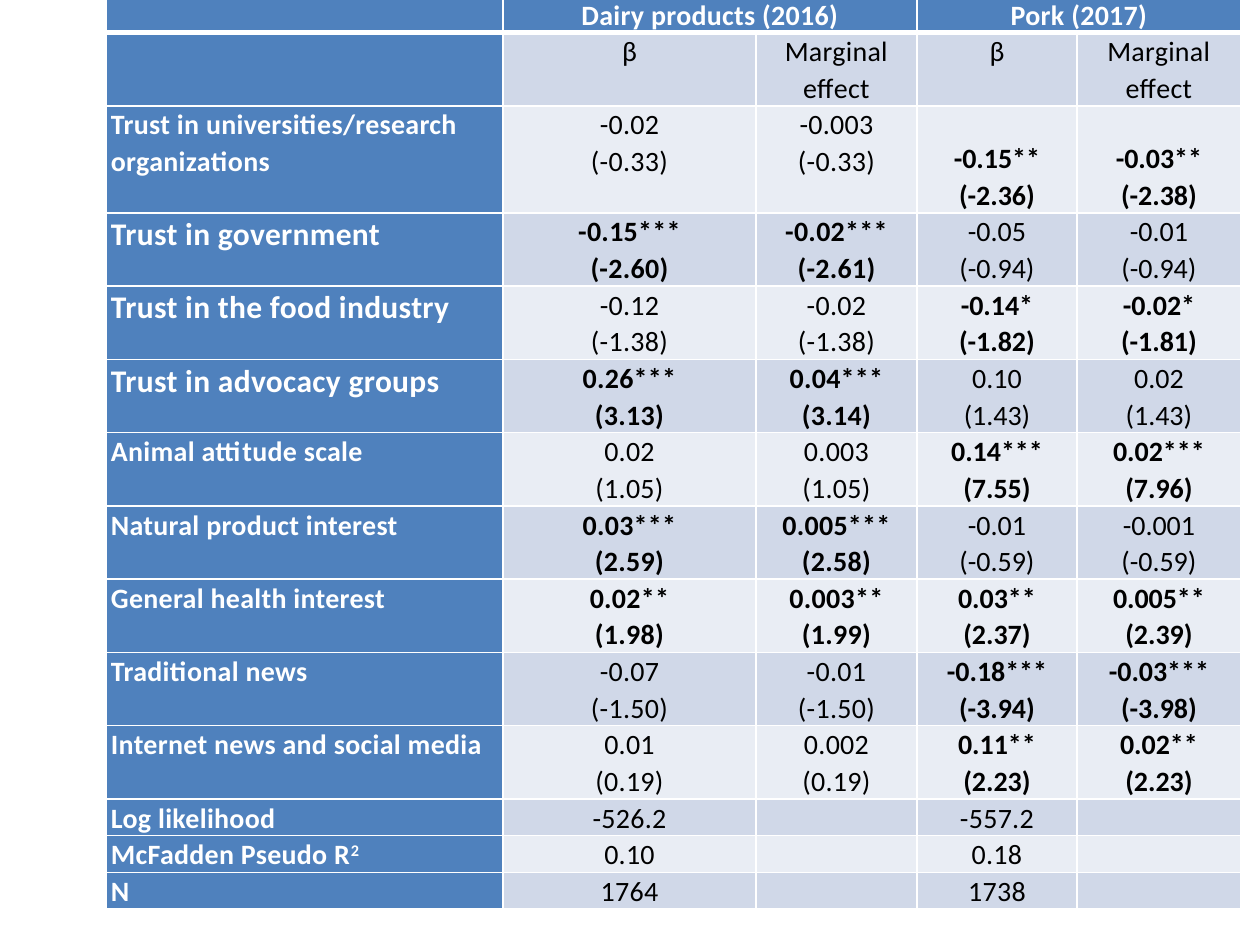
from dataclasses import dataclass
from typing import Optional

from lxml.etree import SubElement
from pptx import Presentation
from pptx.dml.color import RGBColor
from pptx.enum.text import MSO_VERTICAL_ANCHOR as Anchor, PP_PARAGRAPH_ALIGNMENT as Align
from pptx.oxml.ns import qn
from pptx.util import Emu, Pt

EMU_PER_PX = 914400 / 126


@dataclass(frozen=True)
class Theme:
    font: str = "Calibri"
    body_size: int = 16
    large_size: int = 18
    line_spacing: float = 1.07
    tracking: int = 20
    blue: str = "4F81BD"
    band_dark: str = "D0D8E8"
    band_light: str = "E9EDF4"
    white: str = "FFFFFF"
    black: str = "000000"
    rule: float = 1
    header_rule: float = 3


THEME = Theme()


@dataclass(frozen=True)
class Style:
    color: str = THEME.black
    size: int = THEME.body_size
    bold: bool = False
    align: Align = Align.CENTER
    anchor: Anchor = Anchor.TOP
    tracking: int = THEME.tracking


@dataclass(frozen=True)
class Variable:
    label: str
    values: tuple[str, str, str, str]
    height: int = 71
    size: int = THEME.body_size
    superscript: Optional[str] = None


LARGE = THEME.large_size
SINGLE = 35
COLUMN_WIDTHS = (397, 253, 161, 160, 164)
HEADER_HEIGHTS = (SINGLE, 71)
TABLE_LEFT, TABLE_TOP = 106, -4
FIRST_PORK_COLUMN = 3
PRODUCTS = {1: "Dairy products (2016)", 3: "Pork (2017)"}
MEASURES = ("β", "Marginal effect") * 2

VARIABLES = (
    Variable("Trust in universities/research organizations",
             ("-0.02\n(-0.33)", "-0.003\n(-0.33)", "-0.15**\n(-2.36)", "-0.03**\n(-2.38)"), 107),
    Variable("Trust in government",
             ("-0.15***\n(-2.60)", "-0.02***\n(-2.61)", "-0.05\n(-0.94)", "-0.01\n(-0.94)"), size=LARGE),
    Variable("Trust in the food industry",
             ("-0.12\n(-1.38)", "-0.02\n(-1.38)", "-0.14*\n(-1.82)", "-0.02*\n(-1.81)"), size=LARGE),
    Variable("Trust in advocacy groups",
             ("0.26***\n(3.13)", "0.04***\n(3.14)", "0.10\n(1.43)", "0.02\n(1.43)"), size=LARGE),
    Variable("Animal attitude scale",
             ("0.02\n(1.05)", "0.003\n(1.05)", "0.14***\n(7.55)", "0.02***\n(7.96)")),
    Variable("Natural product interest",
             ("0.03***\n(2.59)", "0.005***\n(2.58)", "-0.01\n(-0.59)", "-0.001\n(-0.59)")),
    Variable("General health interest",
             ("0.02**\n(1.98)", "0.003**\n(1.99)", "0.03**\n(2.37)", "0.005**\n(2.39)")),
    Variable("Traditional news",
             ("-0.07\n(-1.50)", "-0.01\n(-1.50)", "-0.18***\n(-3.94)", "-0.03***\n(-3.98)")),
    Variable("Internet news and social media",
             ("0.01\n(0.19)", "0.002\n(0.19)", "0.11**\n(2.23)", "0.02**\n(2.23)")),
    Variable("Log likelihood", ("-526.2", "", "-557.2", ""), SINGLE),
    Variable("McFadden Pseudo R", ("0.10", "", "0.18", ""), SINGLE, superscript="2"),
    Variable("N", ("1764", "", "1738", ""), SINGLE),
)


def px(length: int) -> Emu:
    return Emu(round(length * EMU_PER_PX))


def draw_borders(cell, row: int) -> None:
    properties = cell._tc.get_or_add_tcPr()
    widths = {
        "lnL": THEME.rule,
        "lnR": THEME.rule,
        "lnT": THEME.header_rule if row == 1 else THEME.rule,
        "lnB": THEME.header_rule if row == 0 else THEME.rule,
    }
    for edge, width in widths.items():
        line = SubElement(properties, qn(f"a:{edge}"), w=str(Pt(width)))
        fill = SubElement(line, qn("a:solidFill"))
        SubElement(fill, qn("a:srgbClr"), val=THEME.white)


def format_cell(cell, row: int, column: int) -> None:
    cell.margin_left = cell.margin_right = px(5)
    cell.margin_top = cell.margin_bottom = 0
    draw_borders(cell, row)
    band = THEME.band_dark if row % 2 else THEME.band_light
    cell.fill.solid()
    cell.fill.fore_color.rgb = RGBColor.from_string(
        THEME.blue if row == 0 or column == 0 else band)


def write_cell(cell, text: str, style: Style) -> None:
    cell.text_frame.text = text
    cell.vertical_anchor = style.anchor
    for paragraph in cell.text_frame.paragraphs:
        paragraph.alignment = style.align
        paragraph.line_spacing = THEME.line_spacing
        font = paragraph.font
        font.name = THEME.font
        font.size = Pt(style.size)
        font.bold = style.bold
        font.color.rgb = RGBColor.from_string(style.color)
        paragraph._p.pPr.find(qn("a:defRPr")).set("spc", str(style.tracking))
        if not paragraph.runs:
            SubElement(paragraph._p, qn("a:endParaRPr"), sz=str(style.size * 100))


def write_headers(table) -> None:
    heading = Style(color=THEME.white, bold=True)
    for column, product in PRODUCTS.items():
        table.cell(0, column).merge(table.cell(0, column + 1))
        write_cell(table.cell(0, column), product, heading)
    for row in range(len(HEADER_HEIGHTS)):
        write_cell(table.cell(row, 0), "", heading)
    for column, measure in enumerate(MEASURES, start=1):
        write_cell(table.cell(1, column), measure, Style())


def write_variable(table, row: int, variable: Variable) -> None:
    label_cell = table.cell(row, 0)
    write_cell(label_cell, variable.label,
               Style(THEME.white, variable.size, True, Align.LEFT))
    if variable.superscript:
        run = label_cell.text_frame.paragraphs[0].add_run()
        run.text = variable.superscript
        run._r.get_or_add_rPr().set("baseline", "30000")
    for column, value in enumerate(variable.values, start=1):
        is_pork_estimate = column >= FIRST_PORK_COLUMN and "\n" in value
        write_cell(table.cell(row, column), value, Style(
            bold="*" in value,
            anchor=Anchor.BOTTOM if is_pork_estimate else Anchor.TOP,
            tracking=0 if is_pork_estimate else THEME.tracking,
        ))


def draw_results_table(slide) -> None:
    heights = HEADER_HEIGHTS + tuple(variable.height for variable in VARIABLES)
    table = slide.shapes.add_table(
        len(heights), len(COLUMN_WIDTHS), px(TABLE_LEFT), px(TABLE_TOP),
        px(sum(COLUMN_WIDTHS)), px(sum(heights))).table
    for column, width in zip(table.columns, COLUMN_WIDTHS):
        column.width = px(width)
    for row, height in enumerate(heights):
        table.rows[row].height = px(height)
        for column in range(len(COLUMN_WIDTHS)):
            format_cell(table.cell(row, column), row, column)
    write_headers(table)
    for row, variable in enumerate(VARIABLES, start=len(HEADER_HEIGHTS)):
        write_variable(table, row, variable)


def main() -> None:
    presentation = Presentation()
    presentation.slide_width = px(1260)
    presentation.slide_height = px(945)
    slide = presentation.slides.add_slide(presentation.slide_layouts[6])
    draw_results_table(slide)
    presentation.save("out.pptx")


if __name__ == "__main__":
    main()
